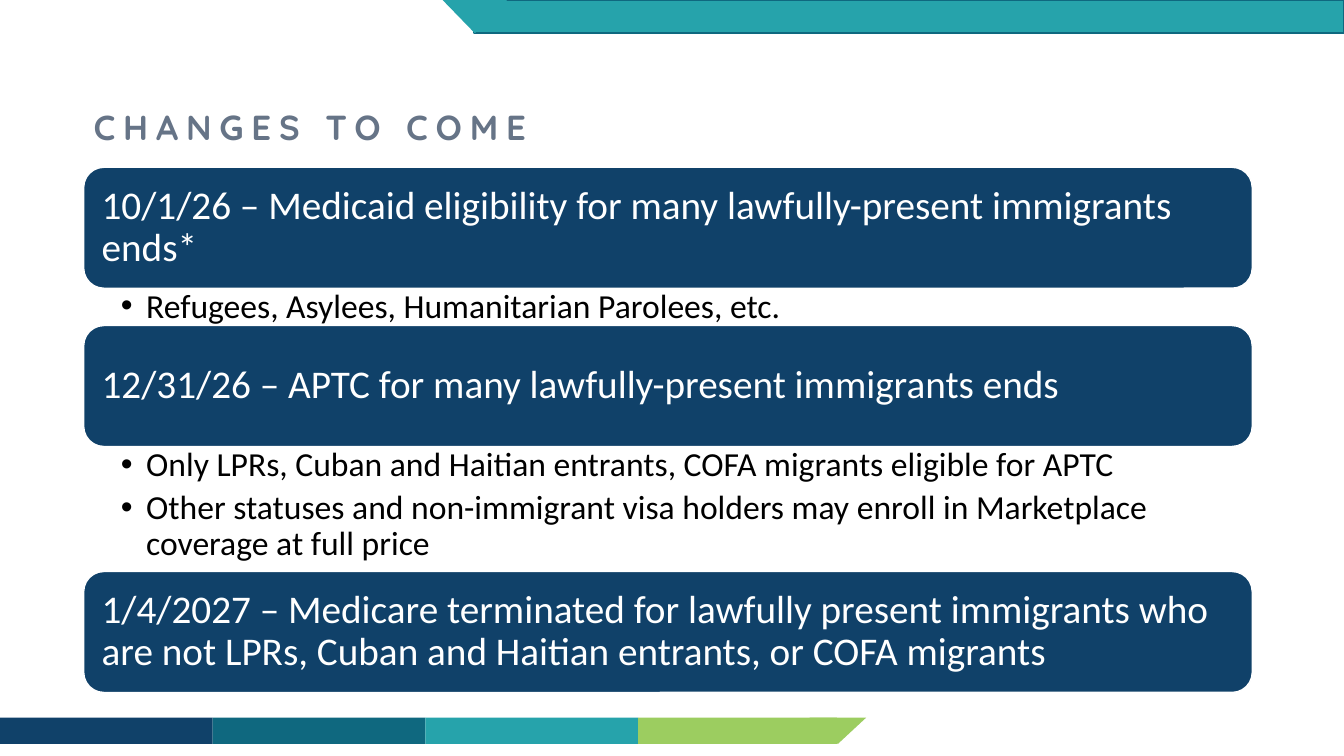
from lxml import etree
from pptx import Presentation
from pptx import util as u
from pptx.dml.color import RGBColor
from pptx.enum import shapes, text
from pptx.oxml.ns import qn

NAVY = RGBColor(0x10, 0x41, 0x69)
PETROL = RGBColor(0x0F, 0x68, 0x7F)
TEAL = RGBColor(0x26, 0xA3, 0xAB)
LIME = RGBColor(0x9C, 0xCD, 0x60)
SLATE = RGBColor(0x66, 0x74, 0x87)
WHITE = RGBColor(0xFF, 0xFF, 0xFF)
BLACK = RGBColor(0, 0, 0)

TITLE = "CHANGES TO COME"
CHANGES = [
    ("10/1/26 – Medicaid eligibility for many lawfully-present immigrants ends*",
     ["Refugees, Asylees, Humanitarian Parolees, etc."], 0.42),
    ("12/31/26 – APTC for many lawfully-present immigrants ends",
     ["Only LPRs, Cuban and Haitian entrants, COFA migrants eligible for APTC",
      "Other statuses and non-immigrant visa holders may enroll in Marketplace coverage at full price"], 1.24),
    ("1/4/2027 – Medicare terminated for lawfully present immigrants who are not LPRs, "
     "Cuban and Haitian entrants, or COFA migrants", [], 0),
]
FOOTER_BANDS = [(NAVY, 2.11), (PETROL, 2.11), (TEAL, 2.11), (LIME, 1.97)]

WIDTH, HEIGHT = 13.33, 7.5
LEFT, CARD_WIDTH, CARD_HEIGHT, FIRST_CARD = 0.83, 11.59, 1.2, 1.66
FOOTER_TOP, FOOTER_HEIGHT = 7.12, 0.26
HEADER_LEFT, HEADER_HEIGHT = 4.7, 0.33

presentation = Presentation()
presentation.slide_width = u.Inches(WIDTH)
presentation.slide_height = u.Inches(HEIGHT)
slide = presentation.slides.add_slide(presentation.slide_layouts[6])


def add_shape(kind, box, fill, line=None, rotation=0):
    shape = slide.shapes.add_shape(kind, *map(u.Inches, box))
    shape.shadow.inherit = False
    shape.fill.solid()
    shape.fill.fore_color.rgb = fill
    if line is None:
        shape.line.fill.background()
    else:
        shape.line.color.rgb = line
        shape.line.width = u.Pt(1)
    shape.rotation = rotation
    return shape


def write(shape, lines, font, size, color, insets, anchor, bullets=False, bold=False):
    frame = shape.text_frame
    frame.word_wrap = True
    frame.vertical_anchor = anchor
    frame.margin_left, frame.margin_top, frame.margin_right, frame.margin_bottom = map(u.Inches, insets)
    for index, line in enumerate(lines):
        paragraph = frame.paragraphs[0] if index == 0 else frame.add_paragraph()
        paragraph.text = line
        if bullets:
            properties = paragraph._p.get_or_add_pPr()
            properties.set("marL", str(u.Inches(0.25)))
            properties.set("indent", str(-u.Inches(0.25)))
            bullet_font = etree.SubElement(properties, qn("a:buFont"))
            bullet_font.set("typeface", "Arial")
            etree.SubElement(properties, qn("a:buChar")).set("char", "•")
            paragraph.space_after = u.Pt(0.2 * size)
        paragraph.alignment = text.PP_ALIGN.LEFT
        paragraph.line_spacing = 0.9
        paragraph.font.name = font
        paragraph.font.size = u.Pt(size)
        paragraph.font.bold = bold
        paragraph.font.color.rgb = color


rectangle = shapes.MSO_SHAPE.RECTANGLE
triangle = shapes.MSO_SHAPE.ISOSCELES_TRIANGLE

band_left = 0
for color, band_width in FOOTER_BANDS:
    add_shape(rectangle, (band_left, FOOTER_TOP, band_width, FOOTER_HEIGHT), color)
    band_left += band_width
add_shape(triangle, (band_left - 0.27, FOOTER_TOP, 0.56, FOOTER_HEIGHT), LIME, rotation=180)
add_shape(rectangle, (HEADER_LEFT, 0, WIDTH - HEADER_LEFT, HEADER_HEIGHT), TEAL, PETROL)
add_shape(triangle, (HEADER_LEFT - 0.31, 0, 0.64, HEADER_HEIGHT), TEAL, rotation=180)

top = FIRST_CARD
for heading, details, details_height in CHANGES:
    card = add_shape(shapes.MSO_SHAPE.ROUNDED_RECTANGLE, (LEFT, top, CARD_WIDTH, CARD_HEIGHT), NAVY, WHITE)
    write(card, [heading], "Calibri", 28, WHITE, [0.12] * 4, text.MSO_ANCHOR.MIDDLE)
    top += CARD_HEIGHT
    if details:
        box = slide.shapes.add_textbox(*map(u.Inches, (LEFT, top - 0.02, CARD_WIDTH, details_height)))
        write(box, details, "Calibri", 24, BLACK, (0.37, 0.03, 0.19, 0.03), text.MSO_ANCHOR.TOP, bullets=True)
        top += details_height - 0.05 * (details_height < 1)

title = slide.shapes.add_textbox(*map(u.Inches, (LEFT, 0.56, 11.5, 1.45)))
write(title, [TITLE], "Quicksand", 24.8, SLATE, (0.1, 0.05, 0.1, 0.05), text.MSO_ANCHOR.MIDDLE, bold=True)
title.text_frame.paragraphs[0].runs[0]._r.get_or_add_rPr().set("spc", "560")

presentation.save("out.pptx")
